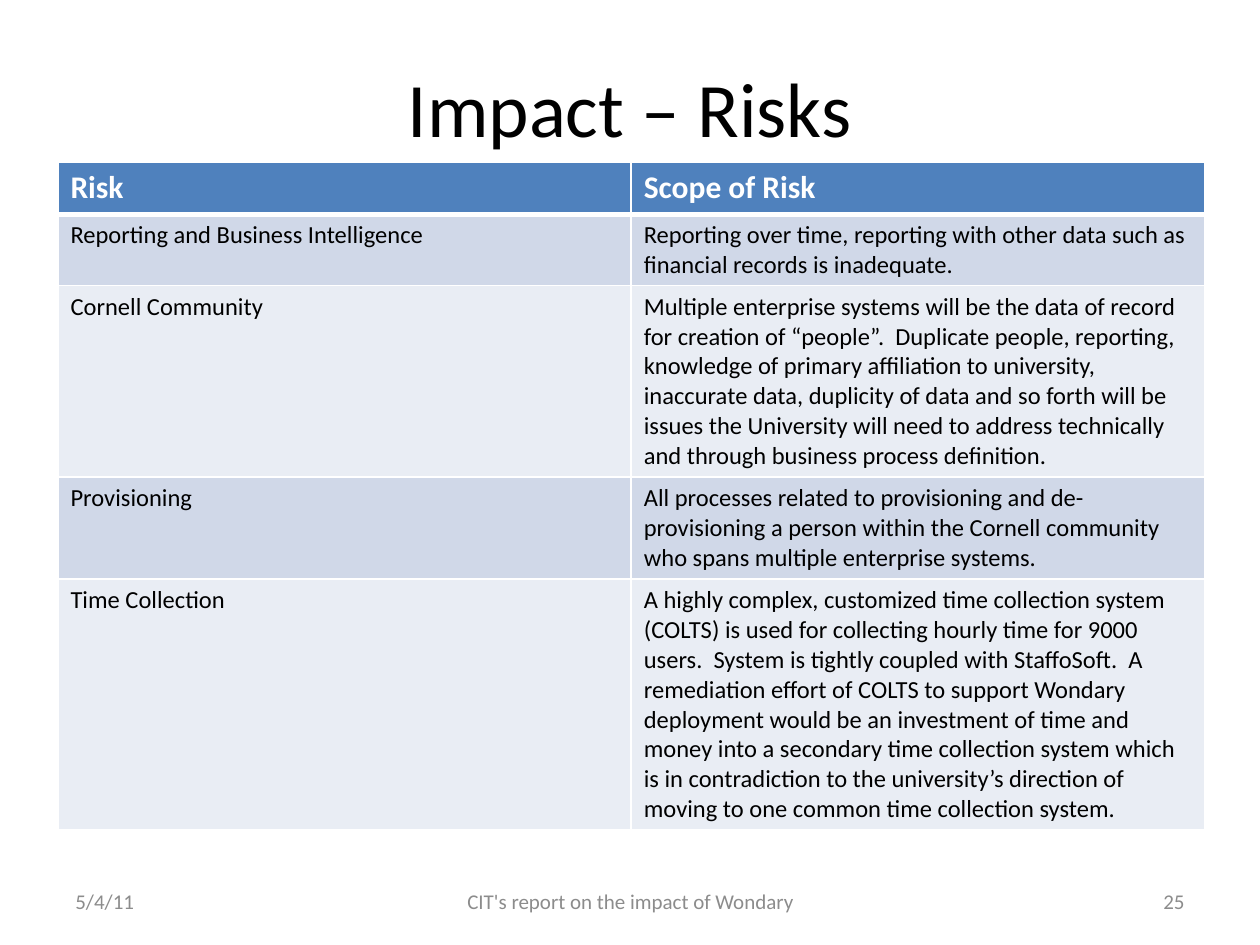
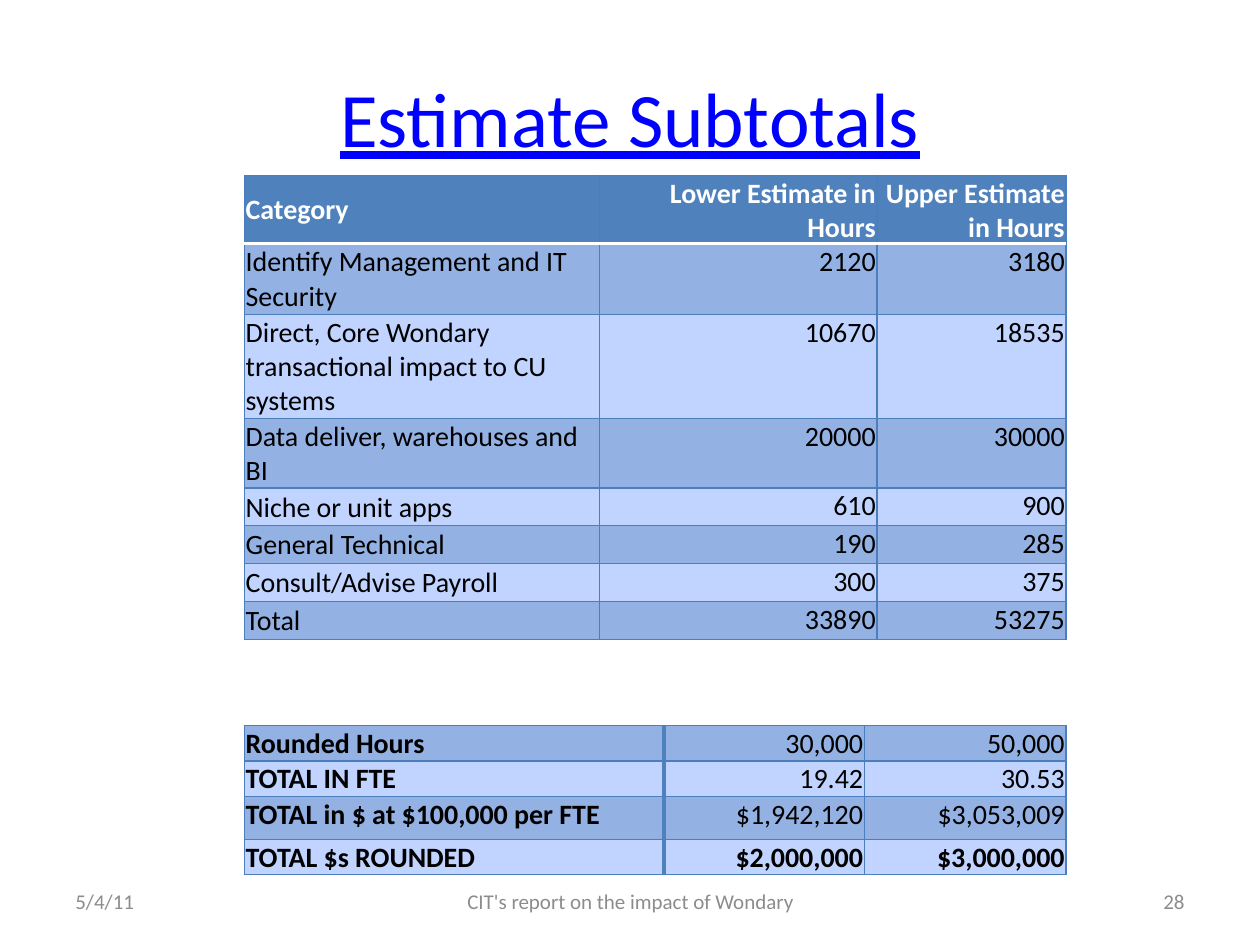
"""Build two slides on the risks and the cost of a payroll system change."""
import dataclasses
import typing

import lxml.etree
import pptx
import pptx.dml.color
import pptx.enum.text
import pptx.oxml.ns
import pptx.util

Inches = pptx.util.Inches
RGBColor = pptx.dml.color.RGBColor
Align = pptx.enum.text.PP_ALIGN
Anchor = pptx.enum.text.MSO_ANCHOR

FONT = "Calibri"
BLACK = RGBColor(0x00, 0x00, 0x00)
WHITE = RGBColor(0xFF, 0xFF, 0xFF)
GREY = RGBColor(0x8C, 0x8C, 0x8C)
LINK_BLUE = RGBColor(0x00, 0x00, 0xFF)
HEADER_BLUE = RGBColor(0x4F, 0x81, 0xBD)
RULE_BLUE = RGBColor(0x4B, 0x7E, 0xBC)
PALE_BANDS = (RGBColor(0xD0, 0xD8, 0xE8), RGBColor(0xE9, 0xED, 0xF4))
BLUE_BANDS = (RGBColor(0x93, 0xB1, 0xE3), RGBColor(0xC0, 0xD4, 0xFF))
TIGHT = {"margin_left": Inches(0.01), "margin_top": Inches(0.01),
         "margin_right": Inches(0.01), "margin_bottom": Inches(0)}


@dataclasses.dataclass(frozen=True)
class Rule:
    """A cell border."""
    color: RGBColor
    width: float


@dataclasses.dataclass(frozen=True)
class Label:
    """A single line of text in a box."""
    text: str
    left: float
    top: float
    width: float
    height: float
    size: float = 12
    color: RGBColor = GREY
    align: Align = Align.LEFT
    underline: bool = False


@dataclasses.dataclass(frozen=True)
class Grid:
    """A banded table with its texts, measures and style."""
    left: float
    top: float
    columns: tuple[float, ...]
    heights: tuple[float, ...]
    texts: tuple[tuple[str, ...], ...]
    bands: tuple[RGBColor, RGBColor]
    rule: Rule
    size: float
    header_size: float = 0
    header_rule: typing.Optional[Rule] = None
    stub_rule: typing.Optional[Rule] = None
    bold_last: bool = False
    numeric: bool = False
    stub_anchor: Anchor = Anchor.TOP
    cell_format: dict = dataclasses.field(default_factory=dict)


@dataclasses.dataclass(frozen=True)
class Page:
    """The content of one slide."""
    title: str
    title_top: float
    title_color: RGBColor
    underline: bool
    number: str
    grids: tuple[Grid, ...]


def apply(target: typing.Any, values: dict) -> None:
    """Set attributes from a dict of format values."""
    for name, value in values.items():
        setattr(target, name, value)


def write(para: typing.Any, text: str, align: Align, size: float,
          color: RGBColor, **extra: bool) -> None:
    """Fill a paragraph with one formatted span."""
    para.alignment = align
    span = para.add_run()
    span.text = text
    apply(span.font, {"name": FONT, "size": pptx.util.Pt(size), **extra})
    span.font.color.rgb = color


def add_label(slide: typing.Any, label: Label) -> None:
    """Draw a vertically centred label."""
    box = slide.shapes.add_textbox(*map(Inches, (
        label.left, label.top, label.width, label.height)))
    apply(box.text_frame, {"word_wrap": True, "vertical_anchor": Anchor.MIDDLE})
    write(box.text_frame.paragraphs[0], label.text, label.align, label.size,
          label.color, underline=label.underline)


def add_borders(cell: typing.Any, rules: dict[str, Rule]) -> None:
    """Put the border lines ahead of the fill in the cell properties."""
    qn = pptx.oxml.ns.qn
    properties = cell._tc.get_or_add_tcPr()
    for index, side in enumerate("LRTB"):
        line = lxml.etree.Element(qn(f"a:ln{side}"))
        line.set("w", str(pptx.util.Pt(rules[side].width)))
        fill = lxml.etree.SubElement(line, qn("a:solidFill"))
        lxml.etree.SubElement(fill, qn("a:srgbClr")).set("val", str(rules[side].color))
        properties.insert(index, line)


def cell_rules(grid: Grid, row: int, column: int) -> dict[str, Rule]:
    """Choose the four borders of a cell so that neighbours agree."""
    rules = dict.fromkeys("LRTB", grid.rule)
    if grid.header_rule and row < 2:
        rules["BT"[row]] = grid.header_rule
    if grid.stub_rule and column < 2:
        rules["RL"[column]] = grid.stub_rule
    return rules


def fill_cell(cell: typing.Any, grid: Grid, row: int, column: int) -> None:
    """Write and style one table cell."""
    is_header = bool(grid.header_size) and row == 0
    is_stub = column == 0
    is_last = grid.bold_last and row == len(grid.texts) - 1
    band = row - 1 if grid.header_size else row
    apply(cell, grid.cell_format)
    cell.vertical_anchor = grid.stub_anchor if is_stub else Anchor.TOP
    cell.fill.solid()
    cell.fill.fore_color.rgb = HEADER_BLUE if is_header else grid.bands[band % 2]
    write(cell.text_frame.paragraphs[0], grid.texts[row][column],
          Align.RIGHT if grid.numeric and not is_stub else Align.LEFT,
          grid.header_size if is_header else grid.size,
          WHITE if is_header else BLACK,
          bold=is_header or is_last or (grid.bold_last and is_stub))
    add_borders(cell, cell_rules(grid, row, column))


def add_grid(slide: typing.Any, grid: Grid) -> None:
    """Draw a table."""
    frame = slide.shapes.add_table(
        len(grid.heights), len(grid.columns), Inches(grid.left), Inches(grid.top),
        Inches(sum(grid.columns)), Inches(sum(grid.heights)))
    table = frame.table
    apply(table, {"first_row": bool(grid.header_size), "horz_banding": False})
    for column, width in zip(table.columns, grid.columns):
        column.width = Inches(width)
    for row, height in zip(table.rows, grid.heights):
        row.height = Inches(height)
    for row in range(len(grid.heights)):
        for column in range(len(grid.columns)):
            fill_cell(table.cell(row, column), grid, row, column)


def add_page(deck: typing.Any, page: Page) -> None:
    """Add a slide with its title, footer and tables."""
    slide = deck.slides.add_slide(deck.slide_layouts[6])
    add_label(slide, Label(page.title, 0.5, page.title_top, 9, 1.25, 44,
                           page.title_color, Align.CENTER, page.underline))
    for label in (
            Label("5/4/11", 0.5, 6.95, 2.33, 0.4),
            Label("CIT's report on the impact of Wondary", 3.42, 6.95, 3.17, 0.4,
                  align=Align.CENTER),
            Label(page.number, 7.17, 6.95, 2.33, 0.4, align=Align.RIGHT)):
        add_label(slide, label)
    for grid in page.grids:
        add_grid(slide, grid)


RISKS = Grid(
    0.46, 1.29, (4.55, 4.55), (0.41, 0.56, 1.52, 0.81, 1.99),
    (("Risk", "Scope of Risk"),
     ("Reporting and Business Intelligence",
      "Reporting over time, reporting with other data such as financial records "
      "is inadequate."),
     ("Cornell Community",
      "Multiple enterprise systems will be the data of record for creation of "
      "“people”.  Duplicate people, reporting, knowledge of primary affiliation to "
      "university, inaccurate data, duplicity of data and so forth will be issues "
      "the University will need to address technically and through business "
      "process definition."),
     ("Provisioning",
      "All processes related to provisioning and de-provisioning a person within "
      "the Cornell community who spans multiple enterprise systems."),
     ("Time Collection",
      "A highly complex, customized time collection system (COLTS) is used for "
      "collecting hourly time for 9000 users.  System is tightly coupled with "
      "StaffoSoft.  A remediation effort of COLTS to support Wondary deployment "
      "would be an investment of time and money into a secondary time collection "
      "system which is in contradiction to the university’s direction of moving "
      "to one common time collection system.")),
    PALE_BANDS, Rule(WHITE, 1), 14, header_size=18, header_rule=Rule(WHITE, 3))

ESTIMATES = Grid(
    1.94, 1.39, (2.82, 2.2, 1.5), (0.54, 0.56, 0.83, 0.55, 0.3, 0.3, 0.3, 0.3),
    (("Category", "Lower Estimate in Hours", "Upper Estimate in Hours"),
     ("Identify Management and IT Security", "2120", "3180"),
     ("Direct, Core Wondary transactional impact to CU systems", "10670", "18535"),
     ("Data deliver, warehouses and BI", "20000", "30000"),
     ("Niche or unit apps", "610", "900"),
     ("General Technical", "190", "285"),
     ("Consult/Advise Payroll", "300", "375"),
     ("Total", "33890", "53275")),
    BLUE_BANDS, Rule(RULE_BLUE, 0.75), 16, header_size=16,
    header_rule=Rule(WHITE, 2), numeric=True, stub_anchor=Anchor.MIDDLE,
    cell_format=TIGHT)

ROUNDED_TOTALS = Grid(
    1.94, 5.76, (3.33, 1.59, 1.6), (0.28, 0.28, 0.34, 0.28),
    (("Rounded Hours", "30,000", "50,000"),
     ("TOTAL IN FTE", "19.42", "30.53"),
     ("TOTAL in $ at $100,000 per FTE", "$1,942,120", "$3,053,009"),
     ("TOTAL $s ROUNDED", "$2,000,000", "$3,000,000")),
    BLUE_BANDS, Rule(RULE_BLUE, 0.75), 16, stub_rule=Rule(HEADER_BLUE, 2),
    bold_last=True, numeric=True, cell_format=TIGHT)

PAGES = (
    Page("Impact – Risks", 0.22, BLACK, False, "25", (RISKS,)),
    Page("Estimate Subtotals", 0.3, LINK_BLUE, True, "28",
         (ESTIMATES, ROUNDED_TOTALS)),
)


def main() -> None:
    """Build and save the deck."""
    deck = pptx.Presentation()
    apply(deck, {"slide_width": Inches(10), "slide_height": Inches(7.5)})
    for page in PAGES:
        add_page(deck, page)
    deck.save("out.pptx")


if __name__ == "__main__":
    main()
